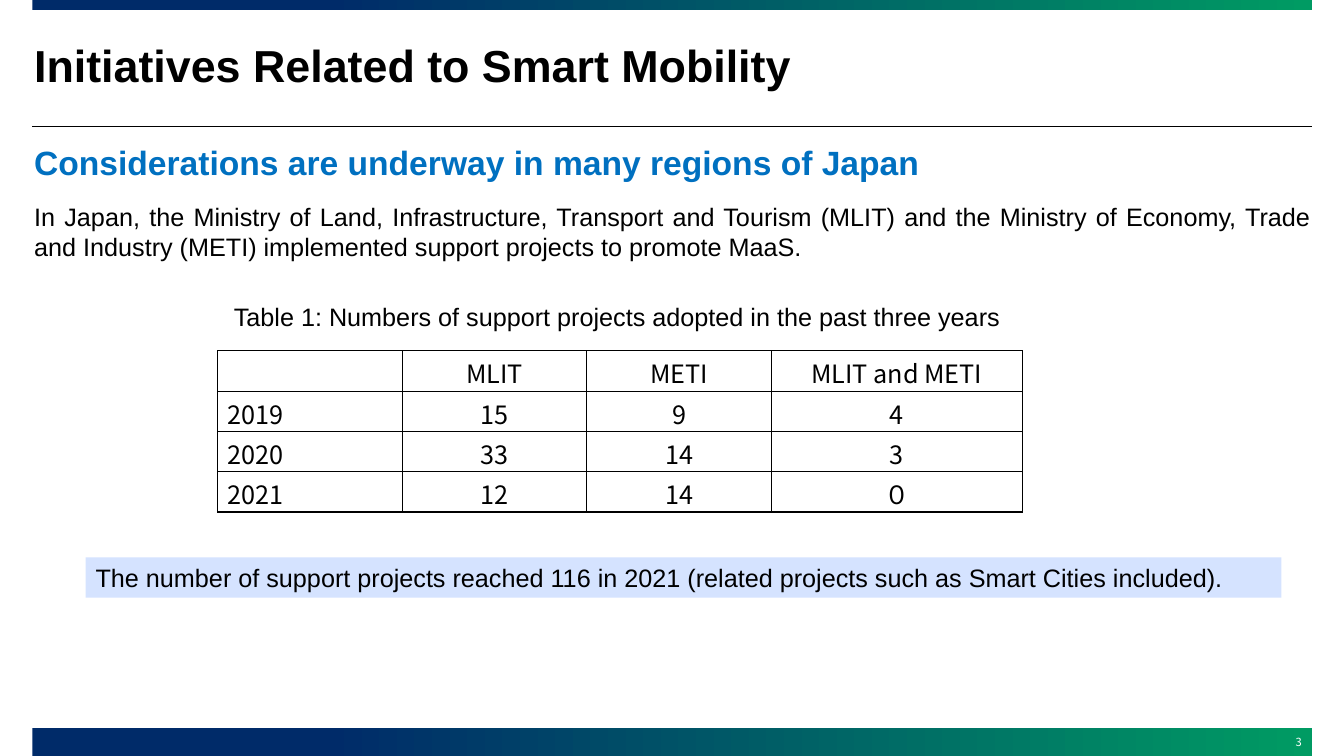
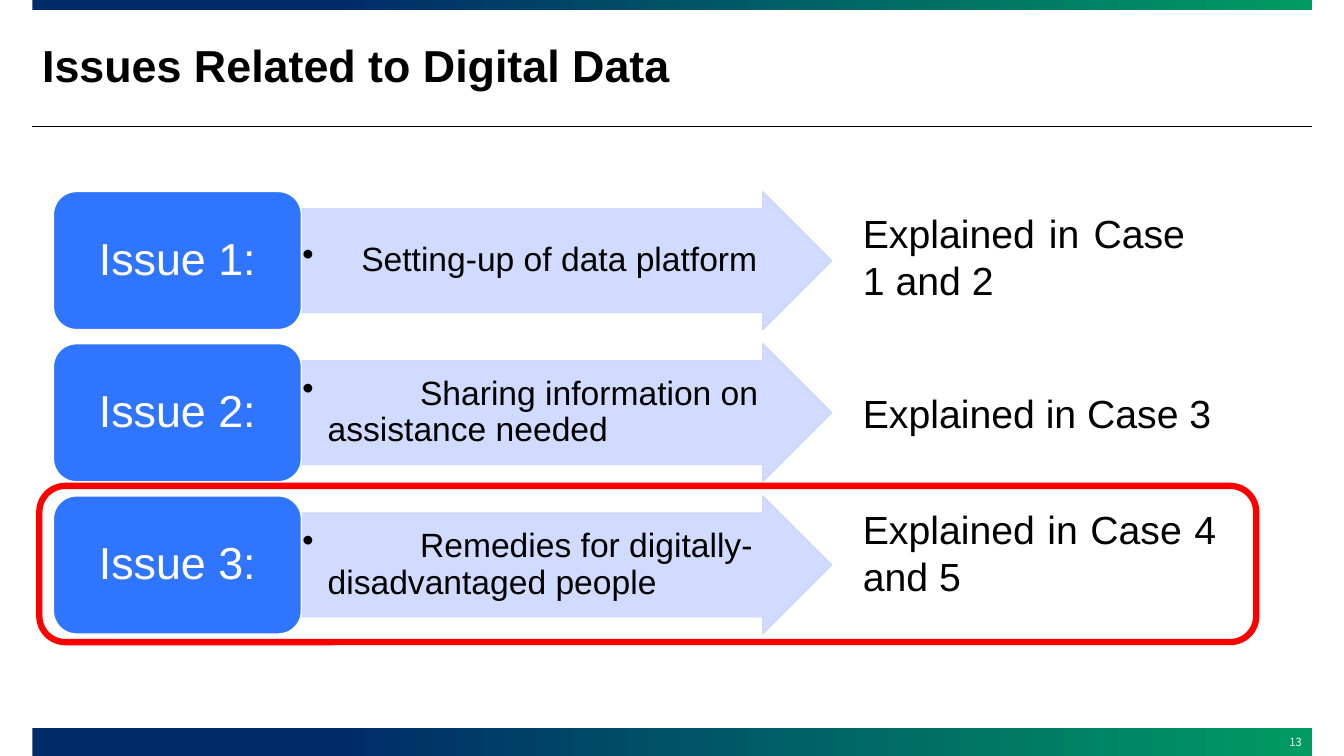
"""Build two slides on smart mobility initiatives and digital data issues."""
from dataclasses import dataclass

from lxml import etree
from pptx import Presentation
from pptx.dml.color import RGBColor
from pptx.enum import shapes, text
from pptx.oxml.ns import qn
from pptx.util import Inches, Pt


@dataclass(frozen=True)
class Theme:
    sans: str = "Arial"
    cjk: str = "Noto Sans CJK JP"
    black: str = "000000"
    white: str = "FFFFFF"
    navy: str = "002B69"
    green: str = "009B63"
    heading: str = "0070C0"
    note: str = "D5E3FF"
    issue: str = "2F75FF"
    arrow: str = "CDD6FF"
    highlight: str = "FF0000"
    title_size: int = 32
    case_size: int = 28
    heading_size: int = 24
    body_size: int = 18
    number_size: int = 8


theme = Theme()
LEFT, CENTER, RIGHT, JUSTIFY = (
    text.PP_ALIGN.LEFT, text.PP_ALIGN.CENTER, text.PP_ALIGN.RIGHT, text.PP_ALIGN.JUSTIFY)
MIDDLE = text.MSO_ANCHOR.MIDDLE


def write(frame, wording, size, color=theme.black, align=LEFT, name=theme.sans,
          bold=False, anchor=text.MSO_ANCHOR.TOP, spacing=None, margins=None):
    frame.word_wrap = True
    frame.vertical_anchor = anchor
    if margins:
        frame.margin_left, frame.margin_top, frame.margin_right, frame.margin_bottom = map(Inches, margins)
    paragraph = frame.paragraphs[0]
    paragraph.text = wording
    paragraph.alignment = align
    paragraph.line_spacing = spacing
    font = paragraph.font
    font.size, font.bold, font.name = Pt(size), bold, name
    font.color.rgb = RGBColor.from_string(color)
    etree.SubElement(font._element, qn("a:ea"), typeface=theme.cjk)
    return paragraph


def add_block(slide, kind, box, fill=None, line=None, width=1):
    shape = slide.shapes.add_shape(kind, *map(Inches, box))
    shape.shadow.inherit = False
    if fill:
        shape.fill.solid()
        shape.fill.fore_color.rgb = RGBColor.from_string(fill)
    else:
        shape.fill.background()
    if line:
        shape.line.color.rgb = RGBColor.from_string(line)
        shape.line.width = Pt(width)
    else:
        shape.line.fill.background()
    return shape


presentation = Presentation()
presentation.slide_width, presentation.slide_height = Inches(13.33), Inches(7.5)
slides = []

for title, title_left, number in [
    ("Initiatives Related to Smart Mobility", 0.24, "3"),
    ("Issues Related to Digital Data", 0.32, "13"),
]:
    slide = presentation.slides.add_slide(presentation.slide_layouts[6])
    slides.append(slide)
    for top, height in [(0, 0.1), (7.22, 0.28)]:
        band = add_block(slide, shapes.MSO_SHAPE.RECTANGLE, (0.32, top, 12.69, height))
        band.fill.gradient()
        band.fill.gradient_angle = 0
        for stop, position, color in zip(band.fill.gradient_stops, (0.23, 1), (theme.navy, theme.green)):
            stop.position = position
            stop.color.rgb = RGBColor.from_string(color)
    rule = slide.shapes.add_connector(
        shapes.MSO_CONNECTOR.STRAIGHT, Inches(0.32), Inches(1.25), Inches(13.01), Inches(1.25))
    rule.line.color.rgb = RGBColor.from_string(theme.black)
    rule.line.width = Pt(0.5)
    etree.SubElement(rule._element.spPr, qn("a:effectLst"))
    title_box = slide.shapes.add_textbox(Inches(title_left), Inches(0.09), Inches(12.8), Inches(1.16))
    write(title_box.text_frame, title, theme.title_size, bold=True, anchor=MIDDLE, spacing=0.9)
    number_box = slide.shapes.add_textbox(Inches(10.54), Inches(7.17), Inches(2.47), Inches(0.33))
    write(number_box.text_frame, number, theme.number_size, theme.white, RIGHT, theme.cjk,
          anchor=MIDDLE, margins=(0.1, 0.05, 0.1, 0))

mobility, issues = slides

for box, wording, size, color, align, bold in [
    ((0.24, 1.36, 9.98, 0.5), "Considerations are underway in many regions of Japan",
     theme.heading_size, theme.heading, LEFT, True),
    ((0.24, 1.95, 12.86, 0.71),
     "In Japan, the Ministry of Land, Infrastructure, Transport and Tourism (MLIT) and the Ministry of "
     "Economy, Trade and Industry (METI) implemented support projects to promote MaaS.",
     theme.body_size, theme.black, JUSTIFY, False),
    ((1.27, 2.94, 9.7, 0.4), "Table 1: Numbers of support projects adopted in the past three years",
     theme.body_size, theme.black, CENTER, False),
]:
    text_box = mobility.shapes.add_textbox(*map(Inches, box))
    write(text_box.text_frame, wording, size, color, align, bold=bold)

projects = [
    ("", "MLIT", "METI", "MLIT and METI"),
    ("2019", "15", "9", "4"),
    ("2020", "33", "14", "3"),
    ("2021", "12", "14", "０"),
]
table = mobility.shapes.add_table(
    4, 4, Inches(2.16), Inches(3.48), Inches(7.98), Inches(1.6)).table
table.first_row = table.horz_banding = False
for column, width in zip(table.columns, (1.83, 1.83, 1.83, 2.49)):
    column.width = Inches(width)
for row_index, row in enumerate(projects):
    for column_index, wording in enumerate(row):
        cell = table.cell(row_index, column_index)
        write(cell.text_frame, wording, theme.body_size, align=CENTER if column_index else LEFT,
              name=theme.cjk)
        cell.margin_top = cell.margin_bottom = 0
        cell.vertical_anchor = text.MSO_ANCHOR.BOTTOM
        properties = cell._tc.get_or_add_tcPr()
        for side in ("lnL", "lnR", "lnT", "lnB"):
            border = etree.SubElement(properties, qn(f"a:{side}"), w=str(Pt(1)))
            border_fill = etree.SubElement(border, qn("a:solidFill"))
            etree.SubElement(border_fill, qn("a:srgbClr"), val=theme.black)
        cell.fill.background()

note = add_block(mobility, shapes.MSO_SHAPE.RECTANGLE, (0.85, 5.53, 11.86, 0.4), theme.note)
write(note.text_frame,
      "The number of support projects reached 116 in 2021 (related projects such as Smart Cities included).",
      theme.body_size, align=JUSTIFY)

for index, (topic, case, case_box, case_align) in enumerate([
    ("\u3000Setting-up of data platform".replace("\u3000", "　"), "Explained in Case 1 and 2",
     (8.46, 2.02, 3.39, 1.04), JUSTIFY),
    ("\tSharing information on assistance needed", "Explained in Case 3",
     (8.46, 3.81, 3.7, 0.57), LEFT),
    ("\tRemedies for digitally- disadvantaged people", "Explained in Case 4 and 5",
     (8.46, 4.96, 3.7, 1.04), JUSTIFY),
]):
    top = 1.9 + index * 1.51
    arrow = add_block(issues, shapes.MSO_SHAPE.RIGHT_ARROW, (2.98, top, 5.27, 1.37),
                      theme.arrow, theme.arrow)
    arrow.adjustments[0], arrow.adjustments[1] = 0.75, 0.5
    for color in arrow._element.spPr.iter(qn("a:srgbClr")):
        etree.SubElement(color, qn("a:alpha"), val="90000")
    properties = arrow.text_frame.paragraphs[0]._p.get_or_add_pPr()
    properties.set("marL", str(Inches(0.25)))
    properties.set("indent", str(Inches(-0.25)))
    properties.set("defTabSz", str(Pt(84)))
    etree.SubElement(properties, qn("a:buChar"), char="•")
    write(arrow.text_frame, topic, theme.heading_size, anchor=MIDDLE, spacing=0.9, margins=(0.02,) * 4)

    label = add_block(issues, shapes.MSO_SHAPE.ROUNDED_RECTANGLE, (0.53, top, 2.46, 1.37),
                      theme.issue, theme.white)
    write(label.text_frame, f"Issue {index + 1}:", theme.title_size, theme.white, CENTER,
          anchor=MIDDLE, spacing=0.9, margins=(0.13, 0.07, 0.13, 0.07))

    case_text = issues.shapes.add_textbox(*map(Inches, case_box))
    write(case_text.text_frame, case, theme.case_size, align=case_align, anchor=MIDDLE)

add_block(issues, shapes.MSO_SHAPE.ROUNDED_RECTANGLE, (0.39, 4.82, 12.07, 1.55),
          line=theme.highlight, width=4.5)

presentation.save("out.pptx")
